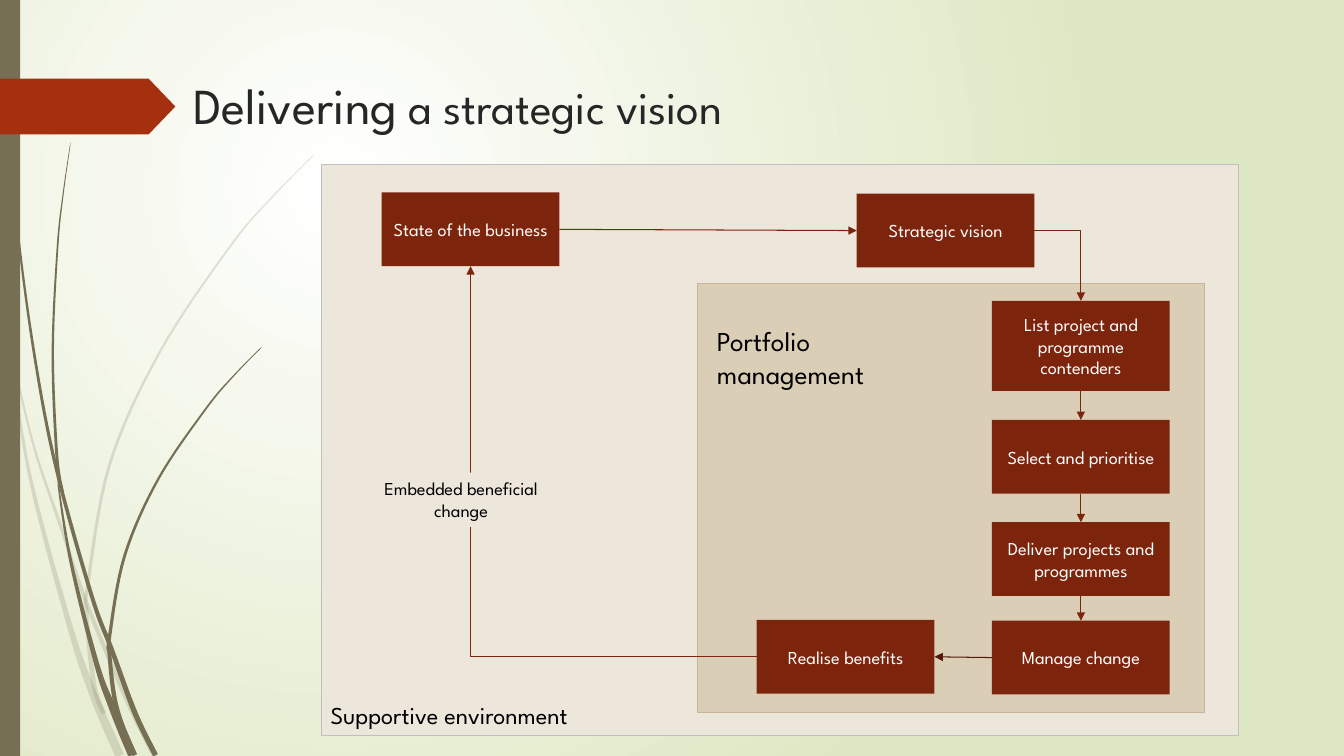
from itertools import pairwise
from math import hypot

from lxml.etree import SubElement
from pptx import Presentation
from pptx.dml.color import RGBColor
from pptx.enum.shapes import MSO_CONNECTOR, MSO_SHAPE
from pptx.enum.text import MSO_ANCHOR, MSO_AUTO_SIZE, PP_ALIGN
from pptx.oxml.ns import qn
from pptx.util import Cm, Pt

FONT = "League Spartan"
WHITE = RGBColor(0xFF, 0xFF, 0xFF)
BLACK = RGBColor(0, 0, 0)
INK = RGBColor(0x26, 0x26, 0x26)
GREEN = RGBColor(0xDF, 0xE8, 0xC4)
OLIVE = RGBColor(0x76, 0x6F, 0x54)
RUST = RGBColor(0xA5, 0x30, 0x10)
BRICK = RGBColor(0x7C, 0x24, 0x0C)
DARK = RGBColor(0x52, 0x18, 0x08)
CREAM = RGBColor(0xED, 0xE6, 0xDB)
SAND = RGBColor(0xDB, 0xCE, 0xB7)
GREY = RGBColor(0xBF, 0xBF, 0xBF)
TAN = RGBColor(0xC8, 0xB5, 0x94)

TOP, LEFT, BOTTOM, RIGHT = range(4)
BOX_W, BOX_H = 4.48, 1.86

# Grass blades: spine points in cm, from tip to root, and the root width
PALE = [
    ([(0, 7.37), (.3, 8.89), (.84, 11.2), (1.52, 13.23), (2.18, 15.19),
      (3.18, 17.6), (3.89, 19.05)], .12),
    ([(.28, 8.89), (.74, 11.94), (1.75, 15.75), (2.34, 17.48), (3.02, 19.05)], .22),
    ([(7.92, 3.89), (6.81, 5.02), (5.8, 6.21), (4.04, 8.85), (2.76, 11.72),
      (2.2, 14.83), (2.18, 15.37), (2.26, 16.41), (2.4, 17.4), (2.62, 17.98)], .12),
]
DEEP = [
    ([(.09, 0), (.19, 2.79), (.46, 5.92), (.88, 9.02), (1.42, 11.81),
      (2.31, 15.01), (2.82, 16.38), (3.4, 17.96), (3.92, 19.03)], .13),
    ([(1.45, 12.1), (1.78, 14.12), (2.43, 16.71), (2.82, 17.8), (3.33, 19.03)], .2),
    ([(1.78, 3.58), (1.59, 4.9), (1.45, 6.22), (1.33, 8.86), (1.43, 11.46),
      (1.57, 12.4)], .08),
    ([(6.6, 8.74), (5.87, 9.49), (5.19, 10.3), (3.99, 12.07), (3.14, 14.01),
      (2.76, 16.05), (2.76, 16.5), (2.87, 17.5), (3.05, 18.2), (3.4, 19.03)], .12),
]


def paint(shape, fill, line=None):
    shape.shadow.inherit = False
    shape.fill.solid()
    shape.fill.fore_color.rgb = fill
    if line is None:
        shape.line.fill.background()
    else:
        shape.line.color.rgb = line
        shape.line.width = Pt(.25)


def write(shape, runs, color, align=PP_ALIGN.LEFT, anchor=MSO_ANCHOR.TOP):
    frame = shape.text_frame
    frame.word_wrap = True
    frame.auto_size = MSO_AUTO_SIZE.NONE
    frame.vertical_anchor = anchor
    para = frame.paragraphs[0]
    para.alignment = align
    for text, size in runs:
        run = para.add_run()
        run.text = text
        run.font.name = FONT
        run.font.size = Pt(size)
        run.font.color.rgb = color


def panel(slide, x, y, w, h, fill, line=None, kind=MSO_SHAPE.RECTANGLE):
    shape = slide.shapes.add_shape(kind, Cm(x), Cm(y), Cm(w), Cm(h))
    paint(shape, fill, line)
    return shape


def box(slide, text, x, y, h=BOX_H):
    shape = panel(slide, x, y, BOX_W, h, BRICK)
    write(shape, [(text, 13)], WHITE, PP_ALIGN.CENTER, MSO_ANCHOR.MIDDLE)
    return shape


def label(slide, text, size, x, y, w, h):
    shape = slide.shapes.add_textbox(Cm(x), Cm(y), Cm(w), Cm(h))
    write(shape, [(text, size)], BLACK)


def arrow(slide, src, start, dst, end, color=BRICK, bent=False):
    kind = MSO_CONNECTOR.ELBOW if bent else MSO_CONNECTOR.STRAIGHT
    link = slide.shapes.add_connector(kind, 0, 0, 0, 0)
    link.begin_connect(src, start)
    link.end_connect(dst, end)
    link.line.color.rgb = color
    link.line.width = Pt(.75)
    props = link._element.spPr
    if bent:
        props.find(qn("a:prstGeom")).set("prst", "bentConnector2")
    SubElement(props.find(qn("a:ln")), qn("a:tailEnd"), type="triangle")
    SubElement(props, qn("a:effectLst"))


def smooth(pts, steps=8):
    """Catmull-Rom curve through the points."""
    ends = [pts[0], *pts, pts[-1]]
    curve = []
    for a, b, c, d in zip(ends, ends[1:], ends[2:], ends[3:]):
        for i in range(steps):
            t = i / steps
            curve.append(tuple(
                q + t * (r - p) / 2 + t * t * (2 * p - 5 * q + 4 * r - s) / 2
                + t ** 3 * (3 * q - p - 3 * r + s) / 2
                for p, q, r, s in zip(a, b, c, d)))
    return curve + [pts[-1]]


def blade(slide, pts, width, alpha=None):
    curve = smooth(pts)
    near, far = [curve[0]], [curve[0]]
    for i, ((x, y), (u, v)) in enumerate(pairwise(curve), 1):
        half = width / 2 * min(1, .15 + i / len(curve))
        size = hypot(u - x, v - y)
        dx, dy = (v - y) / size * half, (x - u) / size * half
        near.append((u + dx, v + dy))
        far.append((u - dx, v - dy))
    edge = [(Cm(x), Cm(y)) for x, y in near + far[::-1]]
    pen = slide.shapes.build_freeform(*edge[0])
    pen.add_line_segments(edge[1:])
    shape = pen.convert_to_shape()
    paint(shape, OLIVE)
    if alpha:
        color = shape._element.spPr.find(qn("a:solidFill"))[0]
        SubElement(color, qn("a:alpha"), val=str(alpha * 1000))


def backdrop(slide):
    fill = slide.background.fill
    fill.gradient()
    for stop, color in zip(fill.gradient_stops, (WHITE, GREEN)):
        stop.color.rgb = color
    lin = slide._element.find(".//" + qn("a:lin"))
    grad = lin.getparent()
    grad.remove(lin)
    glow = SubElement(grad, qn("a:path"), path="circle")
    SubElement(glow, qn("a:fillToRect"), l="50000", t="50000", r="100000", b="100000")


def main():
    deck = Presentation()
    deck.slide_width, deck.slide_height = Cm(33.87), Cm(19.05)
    slide = deck.slides.add_slide(deck.slide_layouts[5])

    # Background and side decoration
    backdrop(slide)
    for pts, width in PALE:
        blade(slide, pts, width, 20)
    for pts, width in DEEP:
        blade(slide, pts, width)
    panel(slide, 0, 0, .51, 19.05, OLIVE)
    flag = panel(slide, 0, 1.98, 4.42, 1.41, RUST, kind=MSO_SHAPE.PENTAGON)
    flag.adjustments[0] = .48

    # Title
    title = slide.shapes.title
    title.left, title.top, title.width, title.height = Cm(4.62), Cm(1.8), Cm(24.77), Cm(1.68)
    write(title, [("Delivering", 36), (" a strategic vision", 32.4)], INK,
          anchor=MSO_ANCHOR.MIDDLE)

    # Panels and boxes
    panel(slide, 8.1, 4.14, 23.11, 14.39, CREAM, GREY)
    panel(slide, 17.57, 7.14, 12.79, 10.8, SAND, TAN)
    state = box(slide, "State of the business", 9.62, 4.85)
    vision = box(slide, "Strategic vision", 21.59, 4.88)
    chain = [box(slide, text, 25, y, h) for text, y, h in (
        ("List project and programme contenders", 7.58, 2.27),
        ("Select and prioritise", 10.58, BOX_H),
        ("Deliver projects and programmes", 13.16, BOX_H),
        ("Manage change", 15.64, BOX_H))]
    gain = box(slide, "Realise benefits", 19.07, 15.62)

    # Arrows
    arrow(slide, state, RIGHT, vision, LEFT)
    arrow(slide, vision, RIGHT, chain[0], TOP, bent=True)
    for upper, lower in pairwise(chain):
        arrow(slide, upper, BOTTOM, lower, TOP)
    arrow(slide, chain[-1], LEFT, gain, RIGHT, DARK)
    arrow(slide, gain, LEFT, state, BOTTOM, bent=True)

    # Labels
    label(slide, "Portfolio management", 19.5, 17.82, 8.05, 6.15, 1.93)
    label(slide, "Supportive environment", 17.3, 8.08, 17.53, 9.14, .99)
    note = panel(slide, 9.04, 11.91, 5.16, 1.37, CREAM)
    write(note, [("Embedded beneficial change", 13)], BLACK, PP_ALIGN.CENTER)

    deck.save("out.pptx")


if __name__ == "__main__":
    main()
